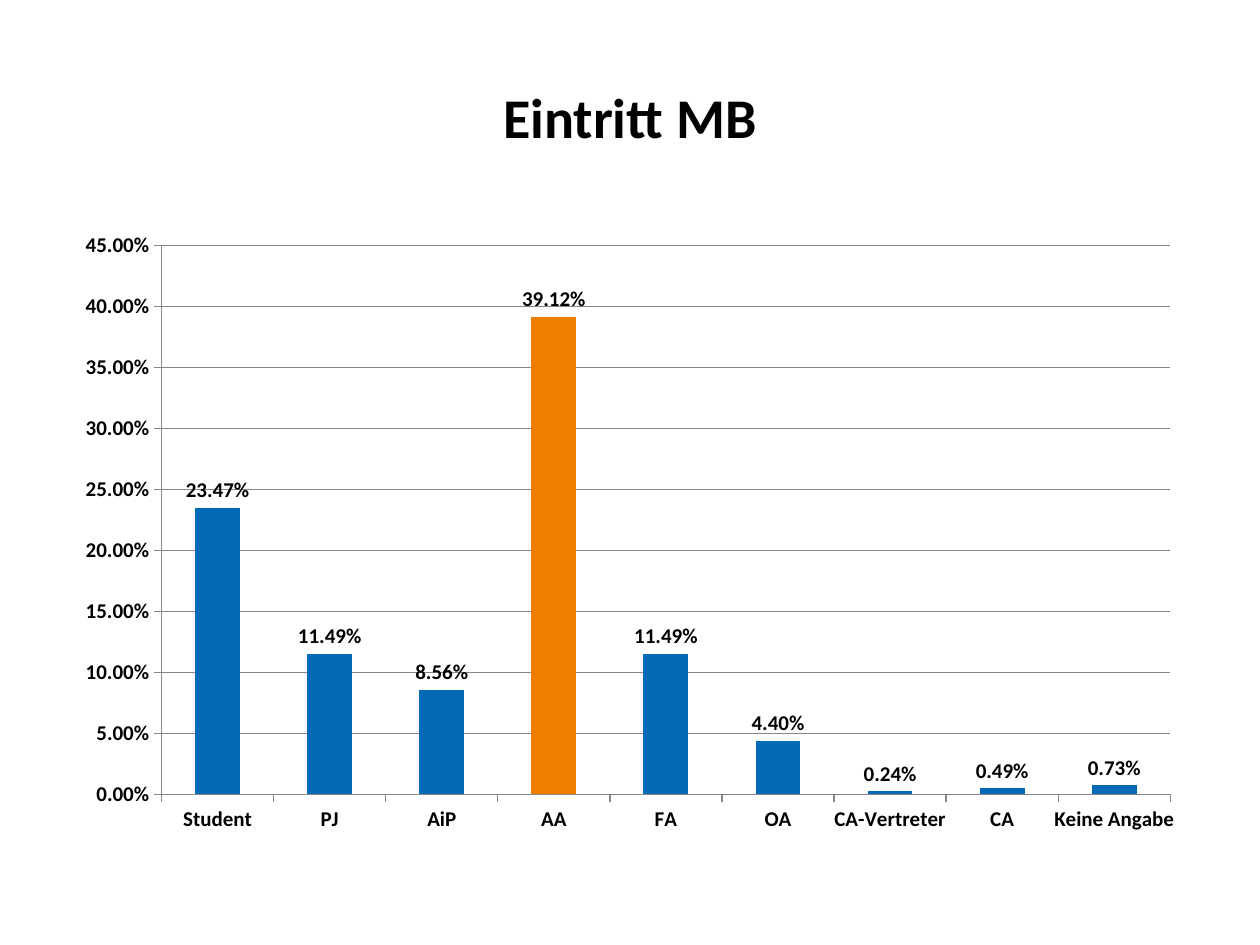
from typing import NamedTuple

from pptx import Presentation
from pptx import util as u
from pptx.chart.data import CategoryChartData
from pptx.dml.color import RGBColor
from pptx.enum import chart as charts
from pptx.enum import text

COLORS = {"text": "000000", "bar": "036AB5", "highlight": "EF7D00", "line": "868686"}
FONT = "Calibri"
PERCENT = "0.00%"


class Entry(NamedTuple):
    position: str
    share: float
    color: str = "bar"


ENTRIES = [
    Entry("Student", 0.2347),
    Entry("PJ", 0.1149),
    Entry("AiP", 0.0856),
    Entry("AA", 0.3912, "highlight"),
    Entry("FA", 0.1149),
    Entry("OA", 0.044),
    Entry("CA-Vertreter", 0.0024),
    Entry("CA", 0.0049),
    Entry("Keine Angabe", 0.0073),
]


def color(name: str) -> RGBColor:
    return RGBColor.from_string(COLORS[name])


def style_font(font, size: float) -> None:
    font.name = FONT
    font.size = u.Pt(size)
    font.bold = True
    font.color.rgb = color("text")


def style_line(line) -> None:
    line.color.rgb = color("line")
    line.width = u.Pt(0.75)


def add_title(slide, title: str) -> None:
    shape = slide.shapes.title
    shape.left, shape.top = u.Inches(0.5), u.Inches(0.3)
    shape.width, shape.height = u.Inches(9), u.Inches(1.25)
    frame = shape.text_frame
    frame.text = title
    frame.vertical_anchor = text.MSO_ANCHOR.MIDDLE
    paragraph = frame.paragraphs[0]
    paragraph.alignment = text.PP_ALIGN.CENTER
    style_font(paragraph.runs[0].font, 32)


def add_entry_chart(slide, entries: list[Entry]) -> None:
    data = CategoryChartData(number_format=PERCENT)
    data.categories = [entry.position for entry in entries]
    data.add_series("Series 1", [entry.share for entry in entries])
    chart = slide.shapes.add_chart(
        charts.XL_CHART_TYPE.COLUMN_CLUSTERED,
        u.Inches(0.5), u.Inches(1.75), u.Inches(9), u.Inches(4.95), data,
    ).chart
    chart.has_title = False
    chart.has_legend = False
    style_font(chart.font, 12)

    for axis in (chart.category_axis, chart.value_axis):
        axis.major_tick_mark = charts.XL_TICK_MARK.OUTSIDE
        axis.minor_tick_mark = charts.XL_TICK_MARK.NONE
        style_line(axis.format.line)
    value_axis = chart.value_axis
    value_axis.minimum_scale, value_axis.maximum_scale = 0, 0.45
    value_axis.major_unit = 0.05
    value_axis.has_major_gridlines = True
    style_line(value_axis.major_gridlines.format.line)
    value_axis.tick_labels.number_format = PERCENT
    value_axis.tick_labels.number_format_is_linked = False

    plot = chart.plots[0]
    plot.gap_width = 150
    plot.vary_by_categories = False
    series = plot.series[0]
    series.invert_if_negative = False
    series.format.fill.solid()
    series.format.fill.fore_color.rgb = color("bar")
    for index, entry in enumerate(entries):
        if entry.color != "bar":
            fill = series.points[index].format.fill
            fill.solid()
            fill.fore_color.rgb = color(entry.color)

    labels = series.data_labels
    labels.show_value = True
    labels.number_format = PERCENT
    labels.number_format_is_linked = False
    labels.position = charts.XL_LABEL_POSITION.OUTSIDE_END
    style_font(labels.font, 12)


def main() -> None:
    presentation = Presentation()
    presentation.slide_width = u.Inches(10)
    presentation.slide_height = u.Inches(7.5)
    slide = presentation.slides.add_slide(presentation.slide_layouts[5])
    add_title(slide, "Eintritt MB")
    add_entry_chart(slide, ENTRIES)
    presentation.save("out.pptx")


if __name__ == "__main__":
    main()
